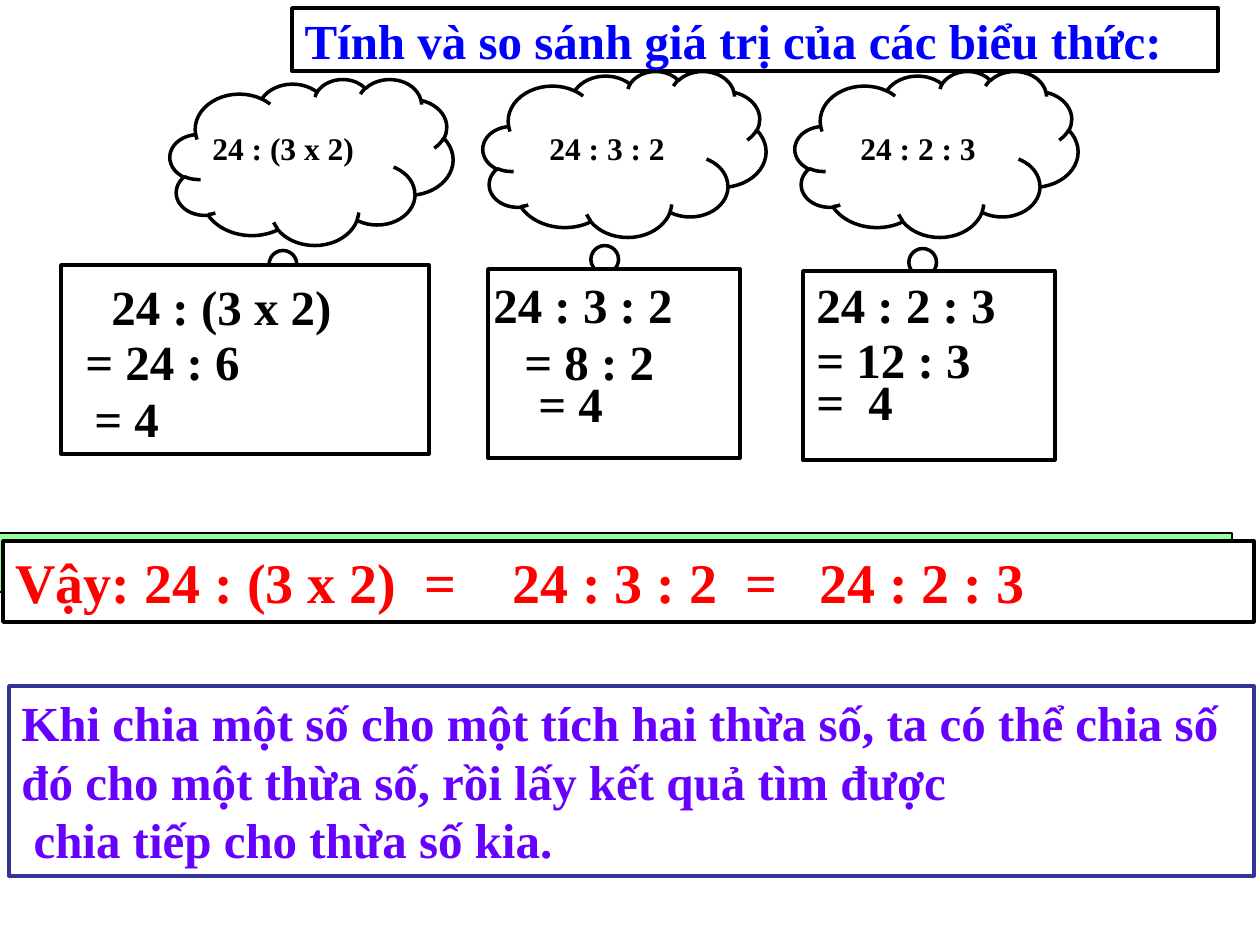
"""Build a lesson slide comparing three ways to divide 24 by 3 and by 2."""
from dataclasses import dataclass

from lxml import etree
from pptx import Presentation
from pptx.dml.color import RGBColor
from pptx.enum.shapes import MSO_SHAPE
from pptx.enum.text import MSO_ANCHOR, MSO_AUTO_SIZE, PP_ALIGN
from pptx.oxml.ns import qn
from pptx.util import Pt

PX = 914400 // 126
RECT, CLOUD = MSO_SHAPE.RECTANGLE, MSO_SHAPE.CLOUD_CALLOUT
TOP, MIDDLE = MSO_ANCHOR.TOP, MSO_ANCHOR.MIDDLE
LEFT = PP_ALIGN.LEFT
NO_FIT = MSO_AUTO_SIZE.NONE


@dataclass(frozen=True)
class Theme:
    font: str = "Times New Roman"
    ink: str = "000000"
    paper: str = "FFFFFF"
    green: str = "99FF99"
    title: str = "0000FF"
    result: str = "FF0000"
    rule: str = "6600FF"
    rule_line: str = "333399"
    small: int = 18
    normal: int = 28
    large: int = 32
    line: float = 2
    thin: float = 0.75


T = Theme()


def style(sp, box, fill=T.paper, line=T.ink, width=T.line):
    sp.left, sp.top, sp.width, sp.height = [v * PX for v in box]
    sp.fill.solid()
    sp.fill.fore_color.rgb = RGBColor.from_string(fill)
    sp.line.color.rgb = RGBColor.from_string(line)
    sp.line.width = Pt(width)


def write(sp, lines, size=T.normal, color=T.ink, anchor=TOP, tabs=()):
    tf = sp.text_frame
    tf.word_wrap = True
    tf.auto_size = NO_FIT
    tf.vertical_anchor = anchor
    for i, line in enumerate(lines):
        p = tf.add_paragraph() if i else tf.paragraphs[0]
        p.alignment = LEFT
        if tabs:
            stops = etree.SubElement(p._p.get_or_add_pPr(), qn("a:tabLst"))
            for pos in tabs:
                etree.SubElement(stops, qn("a:tab"), pos=str(pos * PX), algn="l")
        r = p.add_run()
        r.text = line
        r.font.name = T.font
        r.font.size = Pt(size)
        r.font.bold = True
        r.font.color.rgb = RGBColor.from_string(color)


prs = Presentation()
prs.slide_width, prs.slide_height = 1260 * PX, 945 * PX
s = prs.slides.add_slide(prs.slide_layouts[5])
for ph in list(s.placeholders):
    if ph.placeholder_format.idx:
        ph.element.getparent().remove(ph.element)

clouds = [
    ("24 : (3 x 2)", (170, 79), (200, 228), (-0.15, 0.917)),
    ("24 : 3 : 2", (483, 71), (537, 185), (-0.106, 0.967)),
    ("24 : 2 : 3", (795, 71), (848, 185), (-0.076, 1.018)),
]
for text, (x, y), (label_x, label_w), tail in clouds:
    sp = s.shapes.add_shape(CLOUD, 0, 0, PX, PX)
    sp.shadow.inherit = False
    style(sp, (x, y, 283, 166))
    for i, value in enumerate(tail):
        sp.adjustments[i] = value
    label = s.shapes.add_textbox(label_x * PX, 123 * PX, label_w * PX, 50 * PX)
    write(label, [text], size=T.small, anchor=MIDDLE)

workings = [
    ((61, 265, 368, 189), [("24 : (3 x 2)", 99, 270, 318),
                           ("= 24 : 6", 73, 325, 253),
                           ("= 4", 82, 382, 159)]),
    ((488, 269, 252, 189), [("24 : 3 : 2", 481, 268, 276),
                            ("= 8 : 2", 512, 325, 204),
                            ("= 4", 526, 367, 120)]),
    ((803, 271, 252, 189), [("24 : 2 : 3", 804, 268, 316),
                            ("= 12 : 3", 804, 323, 195),
                            ("=\t4", 804, 365, 203)]),
]
for box, steps in workings:
    sp = s.shapes.add_shape(RECT, 0, 0, PX, PX)
    sp.shadow.inherit = False
    style(sp, box)
    for i, (text, x, y, w) in enumerate(steps):
        step = s.shapes.add_textbox(x * PX, y * PX, w * PX, 72 * PX)
        write(step, [text], anchor=TOP if i else MIDDLE,
              tabs=(52,) if "\t" in text else ())

band = s.shapes.add_shape(RECT, 0, 0, PX, PX)
band.shadow.inherit = False
style(band, (-5, 533, 1237, 59), fill=T.green, width=T.thin)

result = s.shapes.add_shape(RECT, 0, 0, PX, PX)
result.shadow.inherit = False
style(result, (3, 541, 1251, 81))
write(result, ["Vậy: 24 : (3 x 2)\t=\t24 : 3 : 2\t=\t24 : 2 : 3"], size=T.large,
      color=T.result, tabs=(409, 497, 730, 804))

title = s.shapes.title
style(title, (292, 8, 926, 63))
write(title, ["Tính và so sánh giá trị của các biểu thức:"], color=T.title, anchor=MIDDLE)
s.shapes.element.append(title.element)

rule = s.shapes.add_shape(RECT, 0, 0, PX, PX)
rule.shadow.inherit = False
style(rule, (9, 686, 1245, 190), line=T.rule_line)
write(rule, ["Khi chia một số cho một tích hai thừa số, ta có thể chia số đó cho một "
             "thừa số, rồi lấy kết quả tìm được",
             " chia tiếp cho thừa số kia."], color=T.rule)

prs.save("out.pptx")
